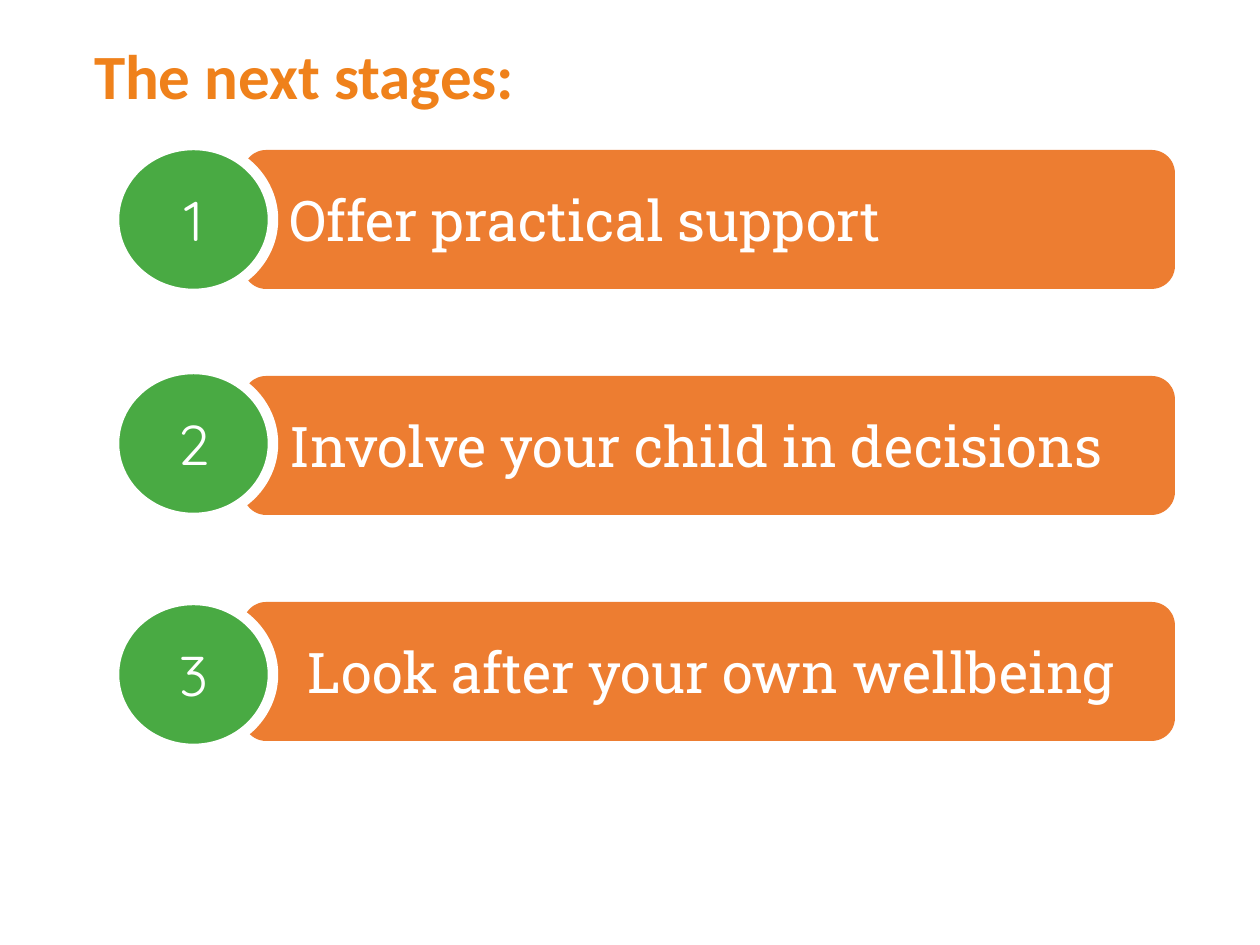
from pptx import Presentation
from pptx.dml.color import RGBColor
from pptx.enum.shapes import MSO_SHAPE
from pptx.enum.text import MSO_ANCHOR, PP_ALIGN
from pptx.util import Inches, Pt

TITLE = RGBColor(0xEF, 0x81, 0x1B)
ORANGE = RGBColor(0xED, 0x7D, 0x31)
GREEN = RGBColor(0x49, 0xAA, 0x43)
WHITE = RGBColor(0xFF, 0xFF, 0xFF)


def px(*nums):
    return [round(n * 914400 / 126) for n in nums]


def write(shape, text, font="Roboto Slab", size=32, color=WHITE, bold=False,
          align=PP_ALIGN.LEFT, anchor=MSO_ANCHOR.MIDDLE, line=1.0,
          inset=(13, 6, 13, 6)):
    frame = shape.text_frame
    frame.word_wrap = True
    frame.vertical_anchor = anchor
    (frame.margin_left, frame.margin_top,
     frame.margin_right, frame.margin_bottom) = px(*inset)
    para = frame.paragraphs[0]
    para.alignment = align
    para.line_spacing = line
    run = para.add_run()
    run.text = text
    run.font.name = font
    run.font.size = Pt(size)
    run.font.bold = bold
    run.font.color.rgb = color


deck = Presentation()
deck.slide_width, deck.slide_height = Inches(10), Inches(7.5)
slide = deck.slides.add_slide(deck.slide_layouts[5])

title = slide.shapes.title
title.left, title.top, title.width, title.height = px(94, 45, 784, 274)
write(title, "The next stages:", font="Calibri", size=36, color=TITLE,
      bold=True, anchor=MSO_ANCHOR.TOP, line=0.9, inset=(0, 0, 0, 0))

stages = [
    ("Offer practical support", 145, 40),
    ("Involve your child in decisions", 369, 40),
    ("Look after your own wellbeing", 600, 58),
]
for step, (text, top, indent) in enumerate(stages):
    bar = slide.shapes.add_shape(
        MSO_SHAPE.ROUNDED_RECTANGLE, *px(243, 150 + 226 * step, 932, 139))
    bar.shadow.inherit = False
    bar.fill.solid()
    bar.fill.fore_color.rgb = ORANGE
    bar.line.fill.background()
    write(bar, text, inset=(indent, 6, 13, 6))

    disc = slide.shapes.add_shape(MSO_SHAPE.OVAL, *px(114, top, 159, 149))
    disc.shadow.inherit = False
    disc.fill.solid()
    disc.fill.fore_color.rgb = GREEN
    disc.line.color.rgb = WHITE
    disc.line.width = Pt(6)
    write(disc, str(step + 1), font="Quicksand", align=PP_ALIGN.CENTER)

deck.save("out.pptx")
